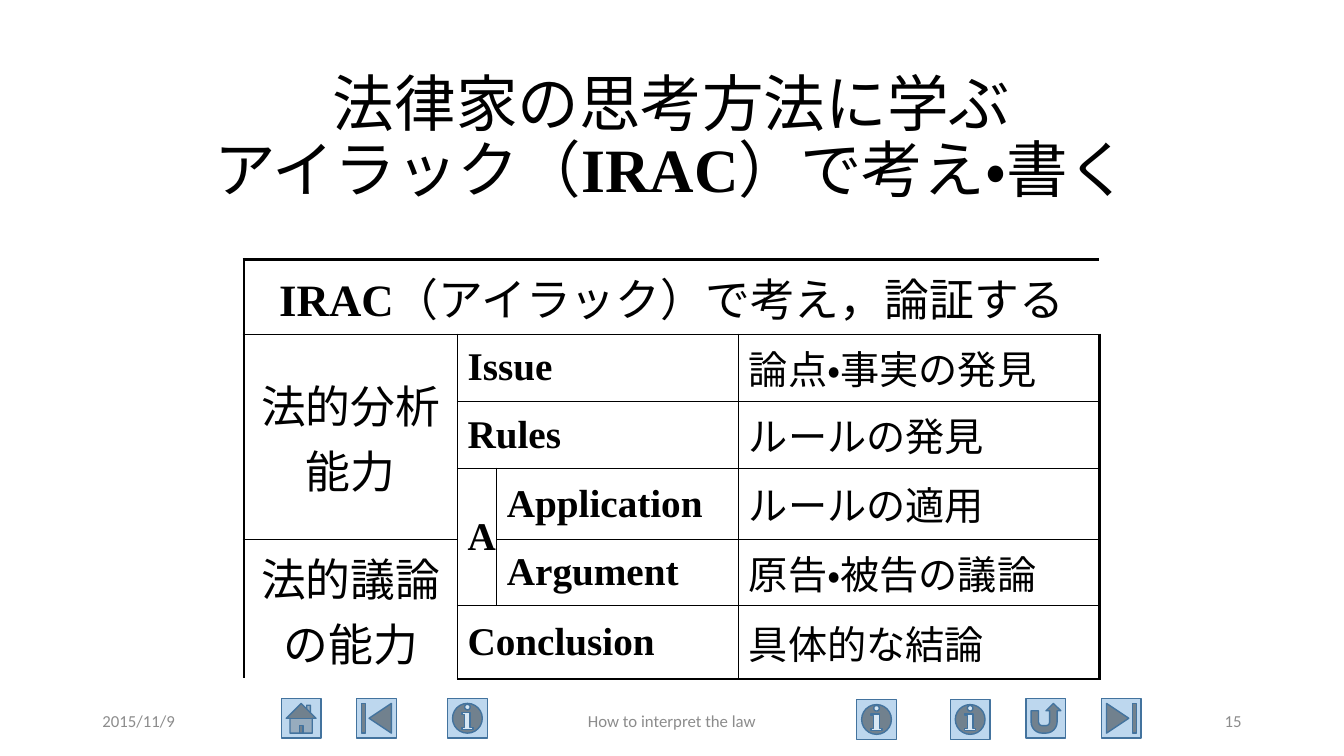
import pptx
import pptx.util
import pptx.dml.color
import pptx.enum.lang
import pptx.enum.shapes
import pptx.enum.text
from lxml import etree

Cm, Pt = pptx.util.Cm, pptx.util.Pt
RGB = pptx.dml.color.RGBColor
SHAPE = pptx.enum.shapes.MSO_SHAPE
ALIGN = pptx.enum.text.PP_ALIGN
MIDDLE = pptx.enum.text.MSO_ANCHOR.MIDDLE
TOP = pptx.enum.text.MSO_ANCHOR.TOP
LANG = pptx.enum.lang.MSO_LANGUAGE_ID

BLACK = RGB(0x00, 0x00, 0x00)
GREY = RGB(0x8C, 0x8C, 0x8C)
PALE = RGB(0xBD, 0xD7, 0xEE)
BLUE = RGB(0x43, 0x73, 0x9E)
NS = "http://schemas.openxmlformats.org/drawingml/2006/main"
ROMAN = "Times New Roman"

WIDTHS = (5.38, 0.99, 6.1, 9.09)
HEIGHTS = (1.89, 1.69, 1.69, 1.79, 1.66, 1.86)
# row, column, rows spanned, columns spanned, size, centred, (text, is Latin) runs
CELLS = (
    (0, 0, 1, 4, 32, True, (("IRAC", True), ("（アイラック）で考え，論証する", False))),
    (1, 0, 3, 1, 32, True, (("法的分析能力", False),)),
    (1, 1, 1, 2, 28, False, (("Issue", True),)),
    (1, 3, 1, 1, 28, False, (("論点・事実の発見", False),)),
    (2, 1, 1, 2, 28, False, (("Rules", True),)),
    (2, 3, 1, 1, 28, False, (("ルールの発見", False),)),
    (3, 1, 2, 1, 28, True, (("A", True),)),
    (3, 2, 1, 1, 28, False, (("Application", True),)),
    (3, 3, 1, 1, 28, False, (("ルールの適用", False),)),
    (4, 0, 2, 1, 32, True, (("法的議論の能力", False),)),
    (4, 2, 1, 1, 28, False, (("Argument", True),)),
    (4, 3, 1, 1, 28, False, (("原告・被告の議論", False),)),
    (5, 1, 1, 2, 28, False, (("Conclusion", True),)),
    (5, 3, 1, 1, 28, False, (("具体的な結論", False),)),
)
# left offset, top offset, shape
BUTTONS = (
    (7.09, 0, SHAPE.ACTION_BUTTON_HOME),
    (8.99, 0, SHAPE.ACTION_BUTTON_BEGINNING),
    (11.28, 0, SHAPE.ACTION_BUTTON_INFORMATION),
    (21.59, 0.03, SHAPE.ACTION_BUTTON_INFORMATION),
    (23.95, 0.03, SHAPE.ACTION_BUTTON_INFORMATION),
    (25.86, 0, SHAPE.ACTION_BUTTON_RETURN),
    (27.76, 0, SHAPE.ACTION_BUTTON_END),
)


def add_run(para, text, face, size, color=BLACK, bold=False, lang=LANG.JAPANESE):
    run = para.add_run()
    run.text = text
    font = run.font
    font.name, font.size, font.bold = face, Pt(size), bold
    font.color.rgb = color
    font.language_id = lang


def add_box(slide, left, top, width, height, align):
    frame = slide.shapes.add_textbox(Cm(left), Cm(top), Cm(width), Cm(height)).text_frame
    frame.word_wrap = True
    frame.vertical_anchor = MIDDLE
    para = frame.paragraphs[0]
    para.alignment = align
    return para


def add_title(slide, left, top, width, height):
    para = add_box(slide, left, top, width, height, ALIGN.CENTER)
    para.line_spacing = 0.9
    add_run(para, "法律家の思考方法に学ぶ", "Calibri", 44)
    para.add_line_break()
    add_run(para, "アイラック（", "Calibri", 44)
    add_run(para, "IRAC", ROMAN, 44, bold=True, lang=LANG.ENGLISH_US)
    add_run(para, "）で考え・書く", "Calibri", 44)


def add_edge(cell, tag, width):
    line = etree.SubElement(cell._tc.get_or_add_tcPr(), f"{{{NS}}}{tag}", w=str(Pt(width)))
    fill = etree.SubElement(line, f"{{{NS}}}solidFill")
    etree.SubElement(fill, f"{{{NS}}}srgbClr", val=str(BLACK))


def add_edges(table, row, col, high, wide):
    """Rule the outside of one merged area, thicker along the table's rim."""
    last, end = row + high, col + wide
    for r in range(row, last):
        for c in range(col, end):
            cell = table.cell(r, c)
            sides = (
                ("lnL", c == col, c == 0),
                ("lnR", c + 1 == end, end == len(WIDTHS)),
                ("lnT", r == row, r == 0),
                ("lnB", r + 1 == last, last == len(HEIGHTS)),
            )
            for tag, shown, rim in sides:
                if shown:
                    add_edge(cell, tag, 2.25 if rim else 1)
            cell.fill.background()


def add_grid(slide, left, top):
    table = slide.shapes.add_table(
        len(HEIGHTS), len(WIDTHS), Cm(left), Cm(top),
        Cm(sum(WIDTHS)), Cm(sum(HEIGHTS))).table
    table.first_row = table.horz_banding = False
    for col, width in zip(table.columns, WIDTHS):
        col.width = Cm(width)
    for row, height in zip(table.rows, HEIGHTS):
        row.height = Cm(height)
    for row, col, high, wide, size, centred, runs in CELLS:
        cell = table.cell(row, col)
        if high * wide > 1:
            cell.merge(table.cell(row + high - 1, col + wide - 1))
        add_edges(table, row, col, high, wide)
        cell.vertical_anchor = MIDDLE if row else TOP
        para = cell.text_frame.paragraphs[0]
        para.alignment = ALIGN.CENTER if centred else ALIGN.LEFT
        for text, latin in runs:
            add_run(para, text, ROMAN if latin else "Lato", size, bold=latin,
                    lang=LANG.ENGLISH_US if latin else LANG.JAPANESE)


def add_footer(slide, left, top, width, height):
    # Navigation buttons
    for x, y, kind in BUTTONS:
        button = slide.shapes.add_shape(kind, Cm(x), Cm(top - 0.05 + y), Cm(1), Cm(1))
        button.shadow.inherit = False
        button.fill.solid()
        button.fill.fore_color.rgb = PALE
        button.line.color.rgb = BLUE
        button.line.width = Pt(1)
    # Date, name and page number
    side, mid = 7.62, 11.43
    parts = (
        (left, side, ALIGN.LEFT, "2015/11/9"),
        (left + (width - mid) / 2, mid, ALIGN.CENTER, "How to interpret the law"),
        (left + width - side, side, ALIGN.RIGHT, "15"),
    )
    for x, wide, align, text in parts:
        para = add_box(slide, x, top, wide, height, align)
        add_run(para, text, "Calibri", 12, GREY, lang=LANG.ENGLISH_US)


def main():
    deck = pptx.Presentation()
    deck.slide_width, deck.slide_height = Cm(33.87), Cm(19.05)
    slide = deck.slides.add_slide(deck.slide_layouts[6])
    add_title(slide, 2.33, 1.68, 29.21, 3.68)
    add_grid(slide, 6.15, 6.53)
    add_footer(slide, 2.33, 17.65, 29.21, 1.01)
    deck.save("out.pptx")


if __name__ == "__main__":
    main()
